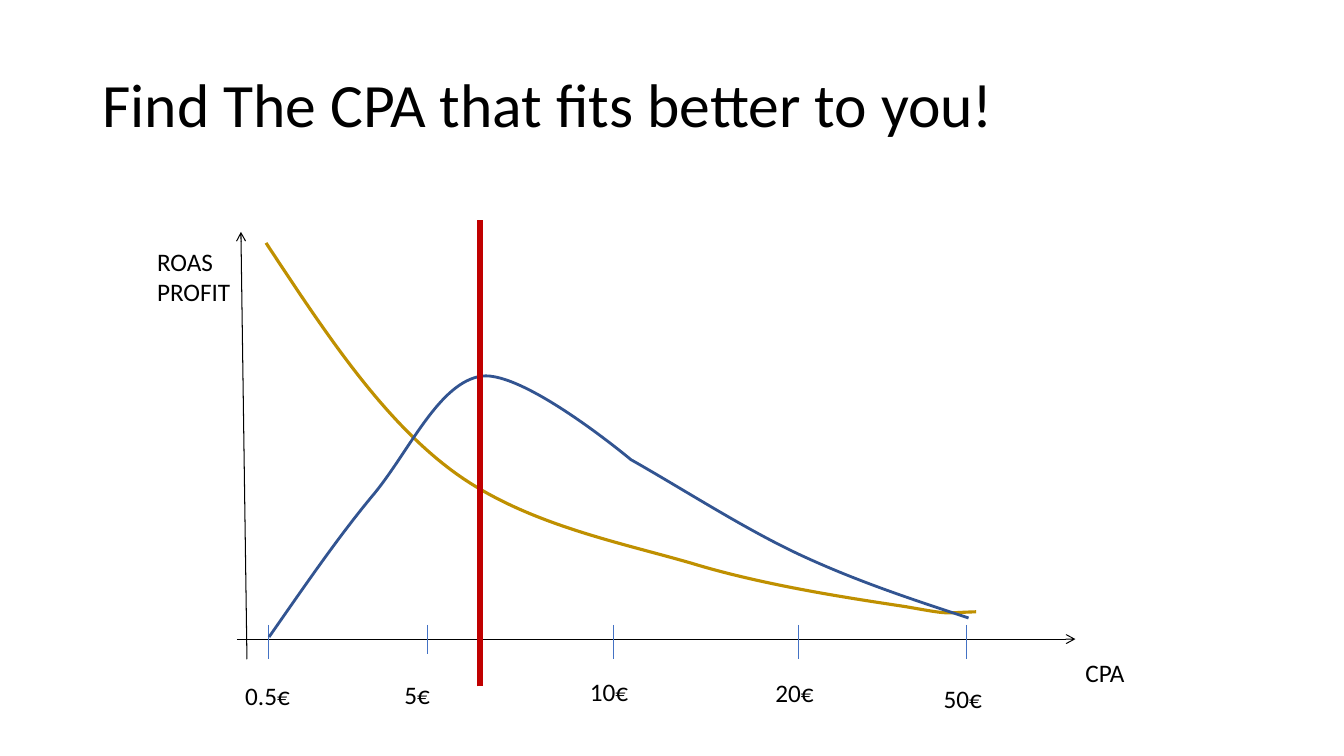
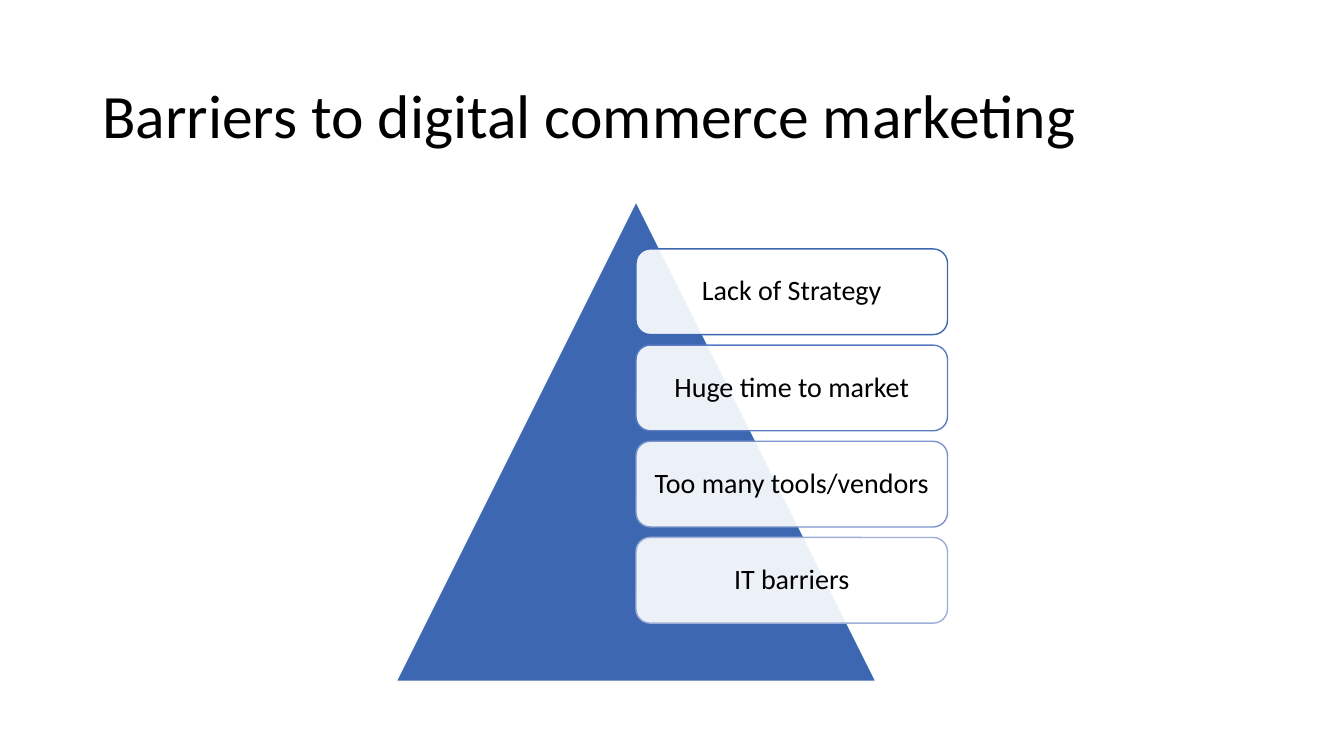
from dataclasses import dataclass

from lxml import etree
from pptx import Presentation
from pptx.dml.color import RGBColor
from pptx.enum.shapes import MSO_CONNECTOR, MSO_SHAPE
from pptx.enum.text import MSO_ANCHOR, MSO_AUTO_SIZE, PP_ALIGN
from pptx.oxml.ns import qn
from pptx.presentation import Presentation as Deck
from pptx.slide import Slide
from pptx.util import Pt

STRAIGHT = MSO_CONNECTOR.STRAIGHT
TRIANGLE = MSO_SHAPE.ISOSCELES_TRIANGLE
ROUNDED = MSO_SHAPE.ROUNDED_RECTANGLE
MIDDLE = MSO_ANCHOR.MIDDLE
FIXED_SIZE = MSO_AUTO_SIZE.NONE
FIT_SHAPE = MSO_AUTO_SIZE.SHAPE_TO_FIT_TEXT
LEFT = PP_ALIGN.LEFT
CENTER = PP_ALIGN.CENTER

BLACK = RGBColor(0x00, 0x00, 0x00)
WHITE = RGBColor(0xFF, 0xFF, 0xFF)
TICK_BLUE = RGBColor(0x44, 0x72, 0xC4)
GOLD = RGBColor(0xBF, 0x90, 0x00)
NAVY = RGBColor(0x32, 0x54, 0x91)
RED = RGBColor(0xC0, 0x00, 0x00)
PYRAMID_BLUE = RGBColor(0x3E, 0x67, 0xB2)

FONT = "Calibri"
TITLE_ONLY = 5
TITLE_FRAME = {"vertical_anchor": MIDDLE, "word_wrap": True, "auto_size": FIXED_SIZE}
LABEL_FRAME = {"word_wrap": False, "auto_size": FIT_SHAPE}
BARRIER_FRAME = {
    "vertical_anchor": MIDDLE,
    "word_wrap": True,
    "margin_left": Pt(6),
    "margin_right": Pt(6),
    "margin_top": Pt(6),
    "margin_bottom": Pt(6),
}
TITLE_PARA = {"alignment": LEFT, "line_spacing": 0.9}
LABEL_PARA = {"alignment": LEFT}
BARRIER_PARA = {"alignment": CENTER, "line_spacing": 0.9}

TICK_TOP = 446.4
TICK_LABEL_SHIFT = 23.5
LABEL_HEIGHT = 28.8
BARRIER_TOP = 177.8
BARRIER_PITCH = 68.7

Point = tuple[float, float]


@dataclass(frozen=True)
class Line:
    start: Point
    end: Point
    color: RGBColor
    width: float
    arrow: bool = False


@dataclass(frozen=True)
class Label:
    text: str
    left: float
    top: float
    width: float


@dataclass(frozen=True)
class Tick:
    text: str
    x: float
    label_top: float
    label_width: float
    bottom: float = 470.9


@dataclass(frozen=True)
class Curve:
    points: tuple[Point, ...]
    color: RGBColor
    width: float


@dataclass(frozen=True)
class Barrier:
    text: str
    outline: RGBColor


AXES = (
    Line((169.2, 456.5), (768.2, 456.5), BLACK, 0.75, True),
    Line((176.4, 470.9), (172.1, 165.6), BLACK, 0.75, True),
)
BEST_CPA = Line((342.7, 490.3), (342.7, 157), RED, 4)
TICKS = (
    Tick("0.5€", 191.5, 482.4, 46.8),
    Tick("5€", 305.3, 481.7, 33.1, 467.3),
    Tick("10€", 437.8, 479.5, 42.5),
    Tick("20€", 570.2, 480.2, 42.5),
    Tick("50€", 690.5, 484.6, 42.5),
)
AXIS_LABELS = (
    Label("CPA", 768.2, 465.8, 42.5),
    Label("PROFIT", 105.1, 193.7, 67),
    Label("ROAS", 105.1, 172.1, 54.7),
)
CURVES = (
    Curve(
        (
            (190, 173.5),
            (230.4, 234.7), (270.7, 296.6), (321.1, 334.8),
            (372.2, 373.7), (439.9, 386.6), (494.6, 402.5),
            (548.6, 419), (614.9, 428.4), (647.3, 433.4),
            (680.4, 439.2), (671.8, 437.8), (697.2, 437),
        ),
        GOLD,
        2.25,
    ),
    Curve(
        (
            (192.2, 455),
            (217.4, 419), (241.9, 383), (267.8, 352.1),
            (293, 321.1), (313.9, 272.9), (344.2, 268.6),
            (375.1, 265), (450.7, 328.3), (450.7, 328.3),
            (488.9, 349.9), (532.1, 378), (572.4, 396.7),
            (612.7, 415.4), (652.3, 428.4), (691.9, 441.4),
        ),
        NAVY,
        2,
    ),
)
BARRIERS = (
    Barrier("Lack of Strategy", PYRAMID_BLUE),
    Barrier("Huge time to market", RGBColor(0x5A, 0x7C, 0xC3)),
    Barrier("Too many tools/vendors", RGBColor(0x7D, 0x95, 0xCD)),
    Barrier("IT barriers", RGBColor(0x9F, 0xAE, 0xD8)),
)


def apply(target: object, values: dict) -> None:
    for name, value in values.items():
        setattr(target, name, value)


def write(box, text: str, size: float, frame_format: dict, para_format: dict) -> None:
    frame = box.text_frame
    apply(frame, frame_format)
    para = frame.paragraphs[0]
    apply(para, para_format)
    span = para.add_run()
    span.text = text
    apply(span.font, {"name": FONT, "size": Pt(size)})
    span.font.color.rgb = BLACK


def set_outline(shape, color: RGBColor, width: float) -> None:
    shape.line.color.rgb = color
    shape.line.width = Pt(width)


def add_titled_page(deck: Deck, text: str, top: float) -> Slide:
    page = deck.slides.add_slide(deck.slide_layouts[TITLE_ONLY])
    title = page.shapes.title
    place = {"left": Pt(66), "top": Pt(top), "width": Pt(828), "height": Pt(104.4)}
    apply(title, place)
    write(title, text, 44, TITLE_FRAME, TITLE_PARA)
    return page


def draw_line(page: Slide, line: Line) -> None:
    ends = [Pt(value) for value in (*line.start, *line.end)]
    connector = page.shapes.add_connector(STRAIGHT, *ends)
    set_outline(connector, line.color, line.width)
    properties = connector.element.spPr
    if line.arrow:
        outline = properties.find(qn("a:ln"))
        etree.SubElement(outline, qn("a:tailEnd"), type="arrow")
    etree.SubElement(properties, qn("a:effectLst"))


def draw_label(page: Slide, label: Label) -> None:
    box = page.shapes.add_textbox(
        Pt(label.left), Pt(label.top), Pt(label.width), Pt(LABEL_HEIGHT)
    )
    write(box, label.text, 18, LABEL_FRAME, LABEL_PARA)


def draw_tick(page: Slide, tick: Tick) -> None:
    draw_line(page, Line((tick.x, TICK_TOP), (tick.x, tick.bottom), TICK_BLUE, 0.5))
    left = tick.x - TICK_LABEL_SHIFT
    draw_label(page, Label(tick.text, left, tick.label_top, tick.label_width))


def draw_curve(page: Slide, curve: Curve) -> None:
    start, *rest = [(Pt(x), Pt(y)) for x, y in curve.points]
    builder = page.shapes.build_freeform(*start)
    builder.add_line_segments(rest, close=False)
    shape = builder.convert_to_shape()
    segments = list(shape.element.iter(qn("a:lnTo")))
    for index in range(0, len(segments), 3):
        bezier = etree.Element(qn("a:cubicBezTo"))
        segments[index].addprevious(bezier)
        for segment in segments[index:index + 3]:
            bezier.append(segment[0])
            segment.getparent().remove(segment)
    shape.fill.background()
    shape.shadow.inherit = False
    set_outline(shape, curve.color, curve.width)


def add_block(
    page: Slide, kind: MSO_SHAPE, place: tuple, fill: RGBColor, outline: RGBColor
):
    shape = page.shapes.add_shape(kind, *[Pt(value) for value in place])
    shape.shadow.inherit = False
    shape.fill.solid()
    shape.fill.fore_color.rgb = fill
    set_outline(shape, outline, 1)
    return shape


def draw_barrier(page: Slide, barrier: Barrier, top: float) -> None:
    place = (454.3, top, 222.5, 61.2)
    card = add_block(page, ROUNDED, place, WHITE, barrier.outline)
    fill = card.element.spPr.find(qn("a:solidFill"))
    etree.SubElement(fill[0], qn("a:alpha"), val="90000")
    write(card, barrier.text, 20, BARRIER_FRAME, BARRIER_PARA)


def build_cpa_page(deck: Deck) -> None:
    page = add_titled_page(deck, "Find The CPA that fits better to you!", 24.5)
    for axis in AXES:
        draw_line(page, axis)
    for tick in TICKS:
        draw_tick(page, tick)
    for label in AXIS_LABELS:
        draw_label(page, label)
    for curve in CURVES:
        draw_curve(page, curve)
    draw_line(page, BEST_CPA)


def build_barriers_page(deck: Deck) -> None:
    page = add_titled_page(deck, "Barriers to digital commerce marketing", 32.4)
    add_block(page, TRIANGLE, (283, 144, 342.7, 342.7), PYRAMID_BLUE, WHITE)
    for index, barrier in enumerate(BARRIERS):
        draw_barrier(page, barrier, BARRIER_TOP + index * BARRIER_PITCH)


def main() -> None:
    deck = Presentation()
    deck.slide_width = Pt(960)
    deck.slide_height = Pt(540)
    build_cpa_page(deck)
    build_barriers_page(deck)
    deck.save("out.pptx")


if __name__ == "__main__":
    main()
